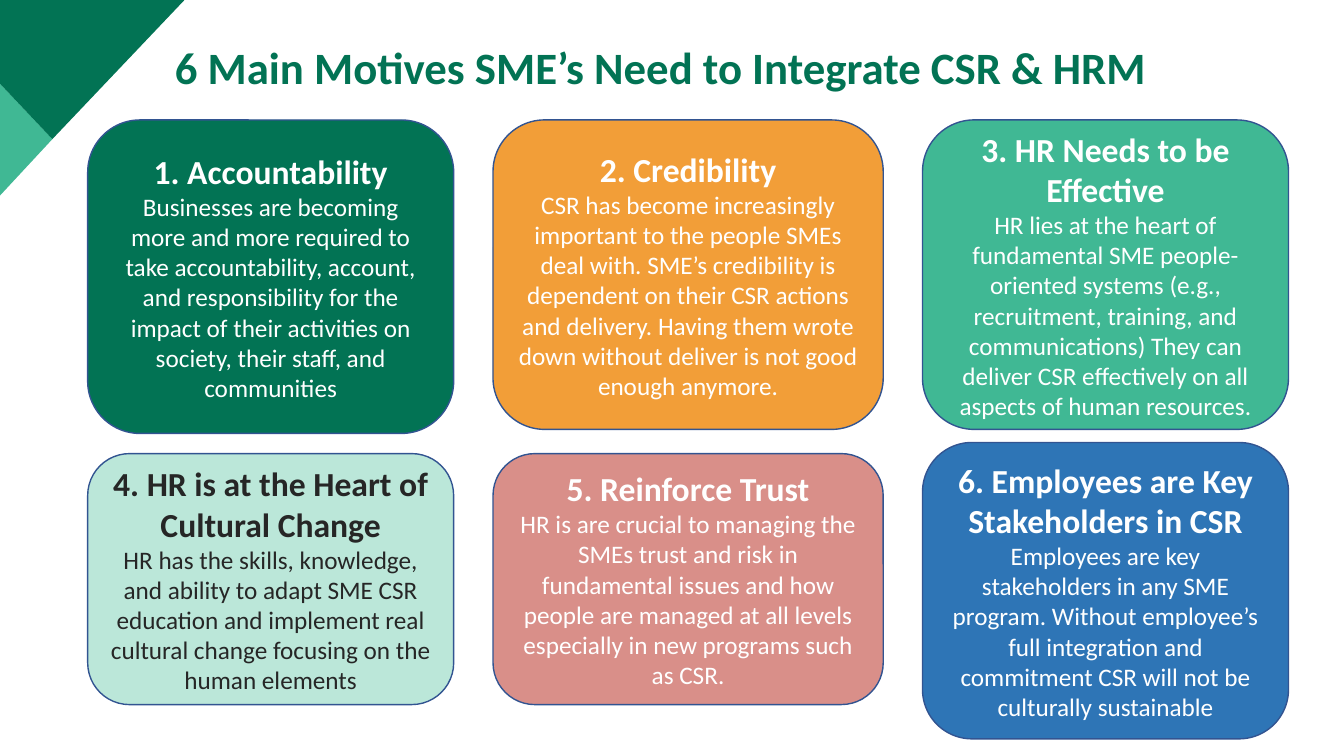
from pptx import Presentation
from pptx.dml.color import RGBColor
from pptx.enum import shapes, text
from pptx.util import Inches, Pt

HUES = {
    "green": "027354", "mint": "40B894", "pale": "BBE7D9", "gold": "F29E38",
    "rose": "D98F89", "blue": "2E75B6", "edge": "325491",
    "white": "FFFFFF", "dark": "262626",
}

# Column: left, width
COLS = [(0.87, 3.63), (4.89, 3.87), (9.15, 3.63)]

# Top, height, fill, ink, heading, body; in reading order
CARDS = [
    (1.19, 3.11, "green", "white", "1. Accountability",
     "Businesses are becoming more and more required to take accountability, "
     "account, and responsibility for the impact of their activities on "
     "society, their staff, and communities"),
    (1.19, 3.07, "gold", "white", "2. Credibility",
     "CSR has become increasingly important to the people SMEs deal with. "
     "SME’s credibility is dependent on their CSR actions and delivery. "
     "Having them wrote down without deliver is not good enough anymore."),
    (1.19, 3.07, "mint", "white", "3. HR Needs to be Effective",
     "HR lies at the heart of fundamental SME people-oriented systems (e.g., "
     "recruitment, training, and communications) They can deliver CSR "
     "effectively on all aspects of human resources."),
    (4.5, 2.49, "pale", "dark", "4. HR is at the Heart of Cultural Change",
     "HR has the skills, knowledge, and ability to adapt SME CSR education "
     "and implement real cultural change focusing on the human elements"),
    (4.5, 2.49, "rose", "white", "5. Reinforce Trust",
     "HR is are crucial to managing the SMEs trust and risk in fundamental "
     "issues and how people are managed at all levels especially in new "
     "programs such as CSR."),
    (4.39, 2.94, "blue", "white", "6. Employees are Key Stakeholders in CSR",
     "Employees are key stakeholders in any SME program. Without employee’s "
     "full integration and commitment CSR will not be culturally sustainable"),
]


def hue(name):
    return RGBColor.from_string(HUES[name])


def assign(item, form):
    for key, value in form.items():
        setattr(item, key, value)


def place(shape, left, top, width, height):
    assign(shape, {"left": Inches(left), "top": Inches(top),
                   "width": Inches(width), "height": Inches(height)})


def paint(shape, fill):
    shape.shadow.inherit = False
    shape.fill.solid()
    shape.fill.fore_color.rgb = hue(fill)


def setup(frame):
    assign(frame, {"word_wrap": True, "auto_size": text.MSO_AUTO_SIZE.NONE,
                   "vertical_anchor": text.MSO_ANCHOR.MIDDLE})


def write(para, words, size, ink, bold):
    para.alignment = text.PP_ALIGN.CENTER
    run = para.add_run()
    run.text = words
    assign(run.font, {"name": "Calibri", "size": Pt(size), "bold": bold})
    run.font.color.rgb = hue(ink)


def add_patch(slide, points, fill):
    first, *rest = [(Inches(x), Inches(y)) for x, y in points]
    build = slide.shapes.build_freeform(*first)
    build.add_line_segments(rest, close=True)
    patch = build.convert_to_shape()
    paint(patch, fill)
    patch.line.fill.background()


def add_title(slide, words):
    title = slide.shapes.title
    place(title, 0.87, -0.03, 11.37, 1.44)
    setup(title.text_frame)
    para = title.text_frame.paragraphs[0]
    assign(para, {"line_spacing": 0.9, "space_before": Pt(10)})
    write(para, words, 32, "green", True)


def add_card(slide, box, fill, ink, head, body):
    card = slide.shapes.add_shape(
        shapes.MSO_SHAPE.ROUNDED_RECTANGLE, *map(Inches, box))
    paint(card, fill)
    card.line.color.rgb = hue("edge")
    card.line.width = Pt(1)
    frame = card.text_frame
    setup(frame)
    write(frame.paragraphs[0], head, 24, ink, True)
    write(frame.add_paragraph(), body, 18, ink, False)


def main():
    deck = Presentation()
    assign(deck, {"slide_width": Inches(13.33), "slide_height": Inches(7.5)})
    slide = deck.slides.add_slide(deck.slide_layouts[5])

    # Corner
    add_patch(slide, [(0, 0.83), (0.52, 1.38), (0, 1.94)], "mint")
    add_patch(slide, [(0, 0), (1.83, 0), (0.52, 1.38), (0, 0.83)], "green")

    # Title
    add_title(slide, "6 Main Motives SME’s Need to Integrate CSR & HRM")

    # Six motives, three to a row
    for i, (top, height, *look) in enumerate(CARDS):
        left, width = COLS[i % len(COLS)]
        add_card(slide, (left, top, width, height), *look)

    deck.save("out.pptx")


if __name__ == "__main__":
    main()
